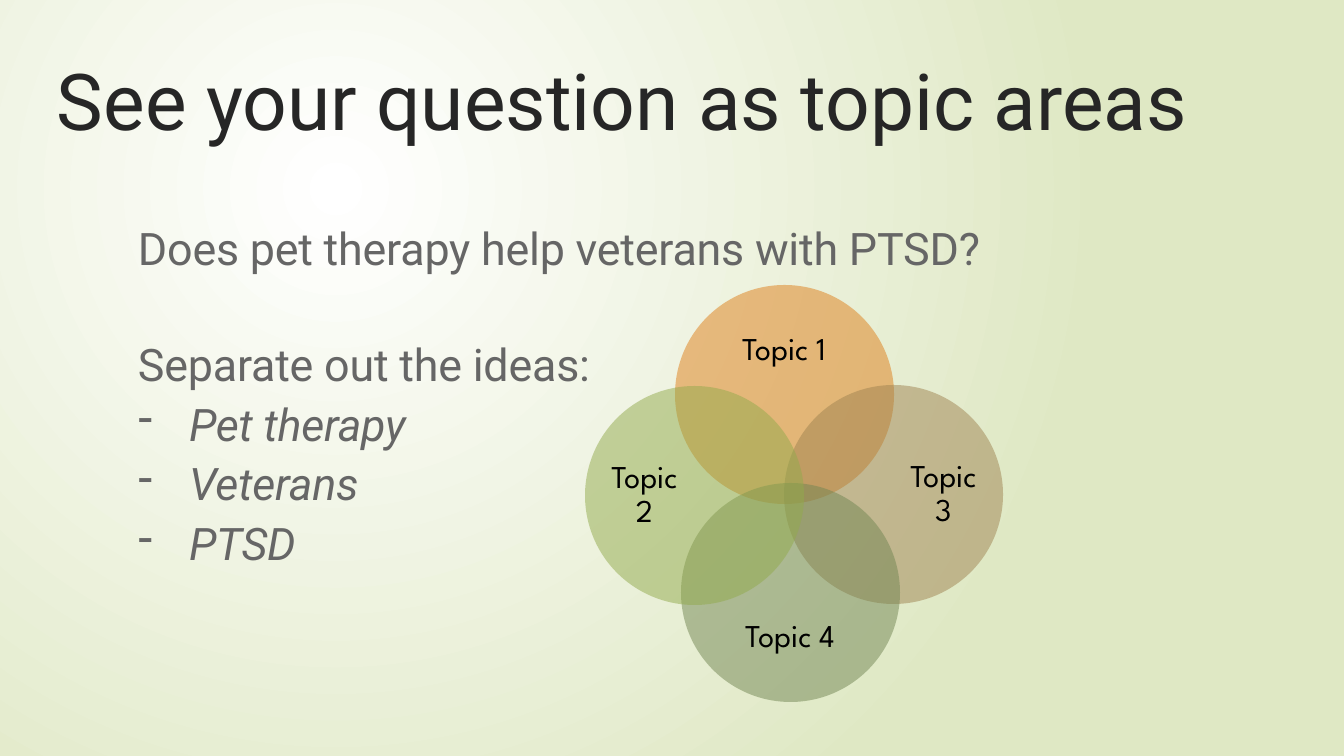
from dataclasses import dataclass

from lxml import etree
from pptx import Presentation
from pptx import util as u
from pptx.dml.color import RGBColor
from pptx.enum import shapes, text
from pptx.oxml import ns

EMU_PER_PX = 914400 / 134.4
COLORS = {
    "center": "FFFFFF",
    "edge": "DFE8C4",
    "title": "262626",
    "body": "666666",
    "label": "000000",
    "orange": "DE7E18",
    "tan": "9F8351",
    "moss": "728653",
    "green": "92AA4C",
}
DIAMETER = 219
LABEL_LONG = 168
LABEL_INSET = 25


@dataclass(frozen=True)
class Box:
    left: int
    top: int
    width: int
    height: int

    def emu(self) -> list[int]:
        return [px(n) for n in (self.left, self.top, self.width, self.height)]


@dataclass(frozen=True)
class Topic:
    name: str
    left: int
    top: int
    color: str
    side: str

    def label_box(self) -> Box:
        """Place the label in the part of the circle that faces outwards."""
        if self.side in ("top", "bottom"):
            height, inset = 70, 30
            drop = inset if self.side == "top" else DIAMETER - height - inset
            return Box(self.left + LABEL_INSET, self.top + drop, LABEL_LONG, height)
        width, inset = 85, 17
        shift = inset if self.side == "left" else DIAMETER - width - inset
        return Box(self.left + shift, self.top + LABEL_INSET, width, LABEL_LONG)


TOPICS = [
    Topic("Topic 1", 675, 285, "orange", "top"),
    Topic("Topic 3", 784, 385, "tan", "right"),
    Topic("Topic 4", 681, 483, "moss", "bottom"),
    Topic("Topic 2", 585, 386, "green", "left"),
]
IDEAS = ["Pet therapy", "Veterans", "PTSD"]


def px(length: int) -> int:
    return round(length * EMU_PER_PX)


def rgb(name: str) -> RGBColor:
    return RGBColor.from_string(COLORS[name])


def add_text_frame(parent, box: Box, inset_top: int = 0, anchor=text.MSO_ANCHOR.TOP):
    frame = parent.add_textbox(*box.emu()).text_frame
    frame.word_wrap = True
    frame.vertical_anchor = anchor
    frame.margin_left = frame.margin_right = frame.margin_bottom = 0
    frame.margin_top = px(inset_top)
    return frame


def write(paragraph, words: str, *, size=24, font="Roboto", color="body",
          italic=False, align=text.PP_ALIGN.LEFT, line=1.0, before=0.0,
          tracking=0, indent=1, bullet=None) -> None:
    """Fill a paragraph; tracking is in hundredths of a point, indent in px."""
    run = paragraph.add_run()
    run.text = words
    run.font.size = u.Pt(size)
    run.font.name = font
    run.font.italic = italic
    run.font.color.rgb = rgb(color)
    if tracking:
        run.font._element.set("spc", str(tracking))
    paragraph.alignment = align
    paragraph.line_spacing = line
    paragraph.space_before = u.Pt(before)
    properties = paragraph._p.get_or_add_pPr()
    properties.set("marL", str(px(indent)))
    properties.set("indent", str(px(-51) if bullet else 0))
    if bullet:
        etree.SubElement(properties, ns.qn("a:buChar"), char=bullet)


def paint_background(slide) -> None:
    """Set a round gradient whose centre is a quarter in from the top left."""
    fill = slide.background.fill
    fill.gradient()
    for stop, position, color in zip(fill.gradient_stops, (0, 1), ("center", "edge")):
        stop.position = position
        stop.color.rgb = rgb(color)
    linear = slide._element.find(f".//{ns.qn('a:lin')}")
    gradient = linear.getparent()
    gradient.remove(linear)
    path = etree.SubElement(gradient, ns.qn("a:path"), path="circle")
    etree.SubElement(path, ns.qn("a:fillToRect"),
                     l="50000", t="50000", r="100000", b="100000")


def draw_topic(parent, topic: Topic) -> None:
    circle = parent.add_shape(
        shapes.MSO_SHAPE.OVAL, *Box(topic.left, topic.top, DIAMETER, DIAMETER).emu())
    circle.shadow.inherit = False
    circle.line.fill.background()
    circle.fill.solid()
    circle.fill.fore_color.rgb = rgb(topic.color)
    color = circle._element.spPr.find(f"{ns.qn('a:solidFill')}/{ns.qn('a:srgbClr')}")
    etree.SubElement(color, ns.qn("a:alpha"), val="50000")
    label = add_text_frame(parent, topic.label_box(), anchor=text.MSO_ANCHOR.MIDDLE)
    write(label.paragraphs[0], topic.name, size=17, font="League Spartan",
          color="label", align=text.PP_ALIGN.CENTER, line=0.9, indent=0)


def main() -> None:
    deck = Presentation()
    deck.slide_width, deck.slide_height = px(1344), px(756)
    slide = deck.slides.add_slide(deck.slide_layouts[6])
    paint_background(slide)

    title = add_text_frame(slide.shapes, Box(56, 51, 1232, 97), inset_top=1)
    write(title.paragraphs[0], "See your question as topic areas",
          size=42, color="title", before=1)

    question = add_text_frame(slide.shapes, Box(137, 211, 953, 60), inset_top=1)
    write(question.paragraphs[0], "Does pet therapy help veterans with PTSD?",
          line=1.16, before=1, tracking=-10)

    ideas = add_text_frame(slide.shapes, Box(137, 332, 640, 241), inset_top=5)
    write(ideas.paragraphs[0], "Separate out the ideas:", before=3.1, tracking=-10)
    for idea in IDEAS:
        write(ideas.add_paragraph(), idea, italic=True, before=3.1,
              tracking=-10, indent=52, bullet="-")

    venn = slide.shapes.add_group_shape()
    for topic in TOPICS:
        draw_topic(venn.shapes, topic)

    deck.save("out.pptx")


if __name__ == "__main__":
    main()
